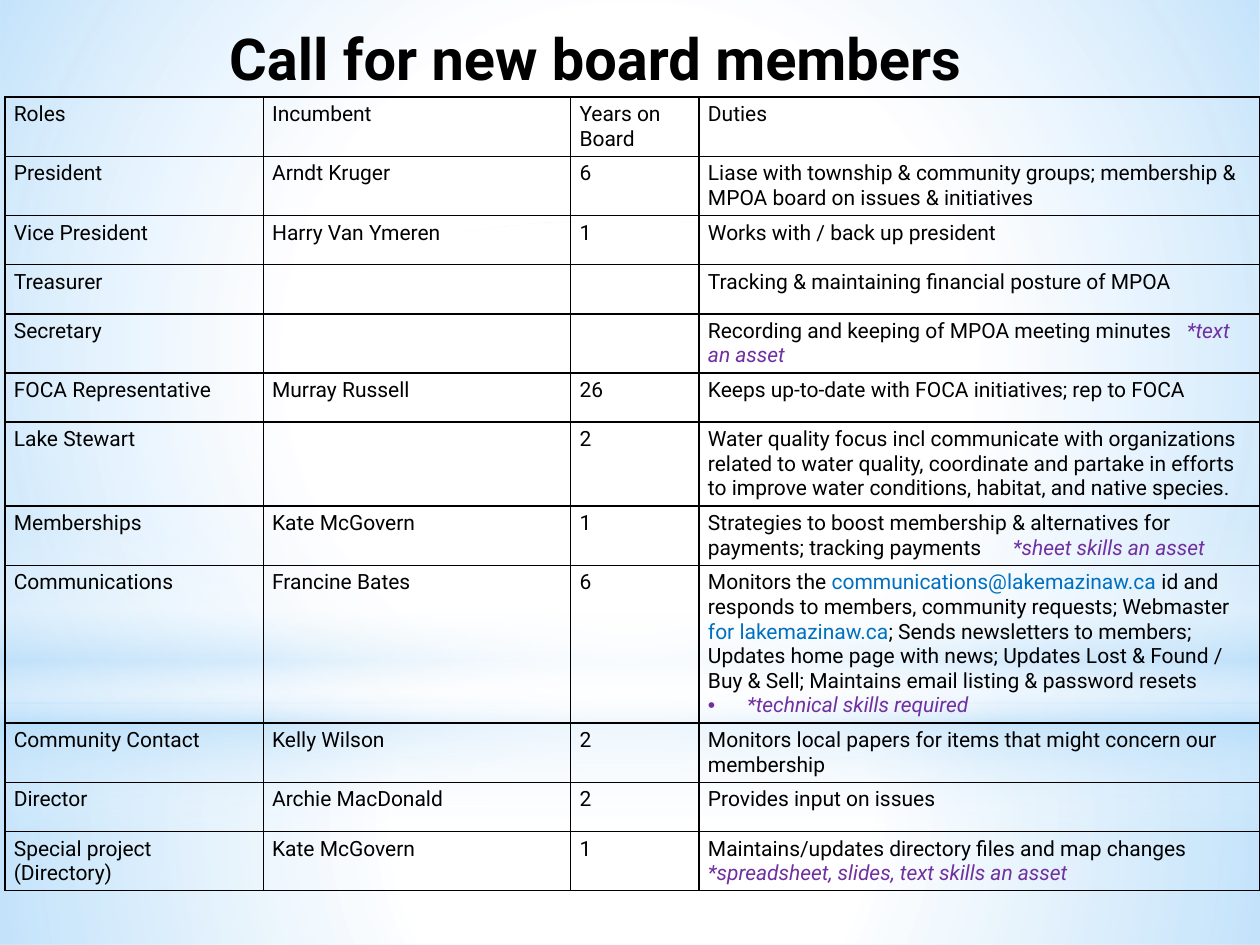
"""Build the board member recruitment slide."""
from dataclasses import dataclass
from typing import NamedTuple

import pptx
import pptx.dml.color
import pptx.enum.shapes
import pptx.enum.text
import pptx.oxml
import pptx.oxml.ns
import pptx.util
from pptx.util import Inches

RECTANGLE = pptx.enum.shapes.MSO_SHAPE.RECTANGLE
OVAL = pptx.enum.shapes.MSO_SHAPE.OVAL


@dataclass(frozen=True)
class Theme:
    """Colours and type sizes of the slide."""
    font: str = "Roboto"
    ink: str = "000000"
    accent: str = "7030A0"
    link: str = "0070C0"
    white: str = "FFFFFF"
    sky: str = "B4DCFA"
    title_size: int = 33
    body_size: int = 12
    border: int = 1


THEME = Theme()


class Stop(NamedTuple):
    """A gradient stop, with position and opacity in percent."""
    position: int
    color: str
    opacity: int


class Glow(NamedTuple):
    """A background shape with a gradient fill."""
    shape: int
    top: float
    height: float
    stops: tuple[Stop, ...]
    radial: bool = True


class Span(NamedTuple):
    """A stretch of text in one style."""
    text: str
    color: str = THEME.ink
    italic: bool = False


class Line(NamedTuple):
    """A paragraph of a cell."""
    spans: tuple[Span, ...]
    tab: float = 0
    bullet: bool = False


class Role(NamedTuple):
    """A table row."""
    name: str
    incumbent: str
    years: str
    duties: str | tuple[Line, ...]


def asset(text: str) -> Span:
    """Style a desired skill."""
    return Span(text, THEME.accent, True)


def link(text: str) -> Span:
    """Style a web or mail address."""
    return Span(text, THEME.link)


GLOWS = (
    Glow(RECTANGLE, 5.58, 1.92, (Stop(0, THEME.white, 91), Stop(37, THEME.white, 76),
                                 Stop(100, THEME.sky, 79))),
    Glow(RECTANGLE, 0, 5.58, (Stop(0, THEME.white, 89), Stop(48, THEME.white, 62),
                              Stop(100, THEME.sky, 79))),
    Glow(RECTANGLE, 4.12, 2.5, (Stop(0, THEME.white, 0), Stop(29, THEME.white, 30),
                                Stop(45, THEME.sky, 40), Stop(55, THEME.white, 26),
                                Stop(65, THEME.sky, 60), Stop(100, THEME.white, 0)), False),
    Glow(OVAL, 1.75, 5.58, (Stop(0, THEME.white, 100), Stop(56, THEME.white, 0))),
)

COLUMN_WIDTHS = (2.05, 2.44, 1.02, 4.45)
ROW_HEIGHT = 0.39

ROLES = (
    Role("Roles", "Incumbent", "Years on Board", "Duties"),
    Role("President", "Arndt Kruger", "6",
         "Liase with township & community groups; membership & MPOA board on issues & initiatives"),
    Role("Vice President", "Harry Van Ymeren", "1", "Works with / back up president"),
    Role("Treasurer", "", "", "Tracking & maintaining financial posture of MPOA"),
    Role("Secretary", "", "", (
        Line((Span("Recording and keeping of MPOA meeting minutes\t"), asset("*text an asset")), 3.8),)),
    Role("FOCA Representative", "Murray Russell", "26",
         "Keeps up-to-date with FOCA initiatives; rep to FOCA"),
    Role("Lake Stewart", "", "2",
         "Water quality focus incl communicate with organizations related to water quality, "
         "coordinate and partake in efforts to improve water conditions, habitat, and native species."),
    Role("Memberships", "Kate McGovern", "1", (
        Line((Span("Strategies to boost membership & alternatives for payments; tracking payments\t"),
              asset("*sheet skills an asset")), 2.42),)),
    Role("Communications", "Francine Bates", "6", (
        Line((Span("Monitors the "), link("communications@lakemazinaw.ca"),
              Span(" id and responds to members, community requests; Webmaster "),
              link("for lakemazinaw.ca"),
              Span("; Sends newsletters to members; Updates home page with news; Updates Lost & "
                   "Found / Buy & Sell; Maintains email listing & password resets"))),
        Line((asset("*technical skills required"),), bullet=True))),
    Role("Community Contact", "Kelly Wilson", "2",
         "Monitors local papers for items that might concern our membership"),
    Role("Director", "Archie MacDonald", "2", "Provides input on issues"),
    Role("Special project (Directory)", "Kate McGovern", "1", (
        Line((Span("Maintains/updates directory files and map changes "),
              asset("*spreadsheet, slides, text skills an asset"))),)),
)


def element(markup: str):
    """Parse a drawing element given without its namespace."""
    head, mark, tail = markup.partition(">")
    slash = "/" if head.endswith("/") else ""
    return pptx.oxml.parse_xml(f"{head.rstrip('/')} {pptx.oxml.ns.nsdecls('a')}{slash}{mark}{tail}")


def draw_glow(page, glow: Glow) -> None:
    """Draw one full-width gradient shape."""
    box = page.shapes.add_shape(glow.shape, 0, Inches(glow.top), Inches(10), Inches(glow.height))
    box.shadow.inherit = False
    box.line.fill.background()
    stops = "".join(
        f'<a:gs pos="{stop.position * 1000}"><a:srgbClr val="{stop.color}">'
        f'<a:alpha val="{stop.opacity * 1000}"/></a:srgbClr></a:gs>' for stop in glow.stops)
    direction = ('<a:path path="circle"><a:fillToRect l="50000" t="50000" r="50000" b="50000"/></a:path>'
                 if glow.radial else '<a:lin ang="5400000" scaled="0"/>')
    fill = element(f"<a:gradFill><a:gsLst>{stops}</a:gsLst>{direction}</a:gradFill>")
    box.element.spPr.find(pptx.oxml.ns.qn("a:prstGeom")).addnext(fill)


def format_font(font, size: int, bold: bool) -> None:
    """Set the common font properties."""
    font.name, font.size, font.bold = THEME.font, pptx.util.Pt(size), bold


def set_color(font, color: str) -> None:
    """Set a font colour."""
    font.color.rgb = pptx.dml.color.RGBColor.from_string(color)


def write_line(para, line: Line) -> None:
    """Write one paragraph of a cell."""
    props = para._p.get_or_add_pPr()
    if line.bullet:
        props.set("marL", str(Inches(0.31)))
        props.set("indent", str(Inches(-0.31)))
        props.append(element('<a:buFont typeface="Arial"/>'))
        props.append(element('<a:buChar char="•"/>'))
    if line.tab:
        props.append(element(f'<a:tabLst><a:tab pos="{Inches(line.tab)}" algn="l"/></a:tabLst>'))
    format_font(para.font, THEME.body_size, False)
    for part in line.spans:
        span = para.add_run()
        span.text = part.text
        span.font.italic = part.italic
        set_color(span.font, part.color)


def fill_cell(cell, content: str | tuple[Line, ...]) -> None:
    """Write a cell and draw its borders."""
    cell.margin_left = cell.margin_right = Inches(0.07)
    cell.margin_top = cell.margin_bottom = Inches(0.04)
    for side in "LRTB":
        cell._tc.get_or_add_tcPr().append(element(
            f'<a:ln{side} w="{pptx.util.Pt(THEME.border)}"><a:solidFill>'
            f'<a:srgbClr val="{THEME.ink}"/></a:solidFill></a:ln{side}>'))
    cell.fill.background()
    lines = (Line((Span(content),) if content else ()),) if isinstance(content, str) else content
    for index, line in enumerate(lines):
        frame = cell.text_frame
        write_line(frame.add_paragraph() if index else frame.paragraphs[0], line)


def draw_title(page, text: str) -> None:
    """Place the title above the background shapes."""
    title = page.shapes.title
    page.shapes.element.append(title.element)
    title.left, title.top, title.width, title.height = map(Inches, (0.04, 0.13, 9.37, 1.21))
    frame = title.text_frame
    frame.text = text
    frame.auto_size = pptx.enum.text.MSO_AUTO_SIZE.NONE
    frame.vertical_anchor = pptx.enum.text.MSO_ANCHOR.TOP
    para = frame.paragraphs[0]
    para.alignment = pptx.enum.text.PP_ALIGN.CENTER
    format_font(para.font, THEME.title_size, True)
    set_color(para.font, THEME.ink)


def draw_roles(page) -> None:
    """Draw the table of roles."""
    table = page.shapes.add_table(
        len(ROLES), len(COLUMN_WIDTHS), Inches(0.04), Inches(0.77),
        Inches(sum(COLUMN_WIDTHS)), Inches(ROW_HEIGHT * len(ROLES))).table
    table.first_row = table.horz_banding = False
    for column, width in zip(table.columns, COLUMN_WIDTHS):
        column.width = Inches(width)
    for row, role in zip(table.rows, ROLES):
        row.height = Inches(ROW_HEIGHT)
        for cell, content in zip(row.cells, role):
            fill_cell(cell, content)


def main() -> None:
    """Build and save the deck."""
    deck = pptx.Presentation()
    deck.slide_width, deck.slide_height = Inches(10), Inches(7.5)
    page = deck.slides.add_slide(deck.slide_layouts[5])
    for glow in GLOWS:
        draw_glow(page, glow)
    draw_title(page, "Call for new board members")
    draw_roles(page)
    deck.save("out.pptx")


if __name__ == "__main__":
    main()
